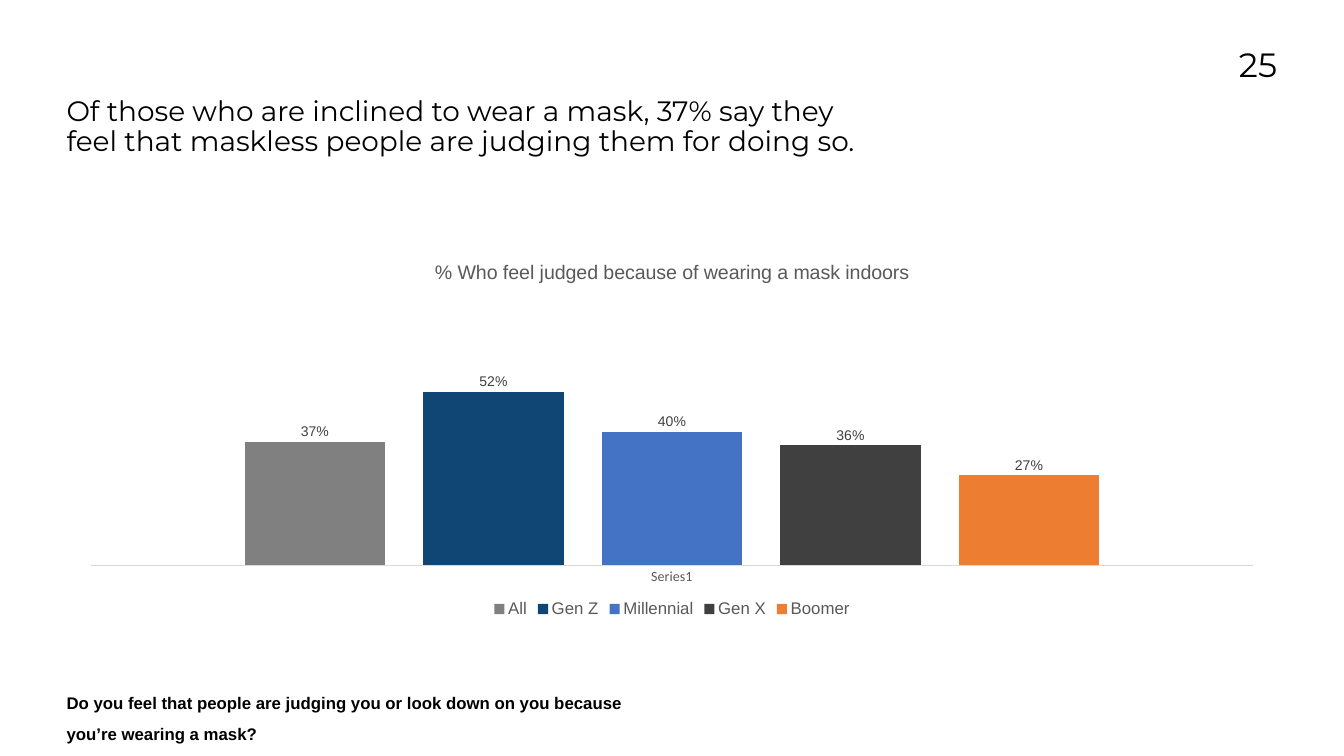
"""Build the slide on feeling judged for wearing a mask indoors."""
from dataclasses import dataclass

from lxml.etree import SubElement
from pptx import Presentation
from pptx.chart.data import CategoryChartData
from pptx.dml.color import RGBColor
from pptx.enum.chart import XL_CHART_TYPE, XL_LABEL_POSITION, XL_LEGEND_POSITION, XL_TICK_MARK
from pptx.enum.text import PP_ALIGN
from pptx.oxml.ns import qn
from pptx.util import Inches, Pt


@dataclass(frozen=True)
class Theme:
    """Colours as RRGGBB, type as (font, points, colour, bold)."""
    axis_line: str = "D9D9D9"
    page: tuple = ("Montserrat", 48, "000000", False)
    headline: tuple = ("Montserrat", 40, "000000", False)
    question: tuple = ("Arial", 24, "000000", True)
    chart_title: tuple = ("Arial", 28, "595959", False)
    legend: tuple = ("Arial", 24, "595959", False)
    axis: tuple = ("Calibri", 20, "595959", False)
    value: tuple = ("Arial", 20, "404040", False)


GENERATIONS = [
    ("All", 0.37, "808080"),
    ("Gen Z", 0.52, "104674"),
    ("Millennial", 0.40, "4472C4"),
    ("Gen X", 0.36, "404040"),
    ("Boomer", 0.27, "ED7D31"),
]


def apply(target, formats):
    """Set each attribute of target from a dict of format values."""
    for attribute, value in formats.items():
        setattr(target, attribute, value)


class SlideBuilder:
    """Holds the theme and the slide; places are in a 100 by 100 grid."""

    def __init__(self, deck, theme):
        self.theme = theme
        self.slide = deck.slides.add_slide(deck.slide_layouts[6])
        self.column = deck.slide_width / 100
        self.row = deck.slide_height / 100

    def place(self, left, top, width, height):
        """Turn grid units into lengths."""
        return [round(share * unit) for share, unit in
                zip((left, top, width, height), (self.column, self.row) * 2)]

    def style(self, font, look):
        """Give a font one of the theme's type styles."""
        name, size, color, bold = look
        apply(font, {"name": name, "size": Pt(size), "bold": bold})
        font.color.rgb = RGBColor.from_string(color)

    def text(self, place, words, look, **paragraph_format):
        """Add a text box without insets."""
        frame = self.slide.shapes.add_textbox(*self.place(*place)).text_frame
        apply(frame, {"word_wrap": True, "margin_left": 0, "margin_right": 0,
                      "margin_top": 0, "margin_bottom": 0})
        paragraph = frame.paragraphs[0]
        apply(paragraph, paragraph_format)
        run = paragraph.add_run()
        run.text = words
        self.style(run.font, look)

    def columns(self, place, title, category, groups, plot_area):
        """Add a clustered column chart with one series per group."""
        data = CategoryChartData(number_format="0%")
        data.categories = [category]
        for name, share, _ in groups:
            data.add_series(name, [share])
        chart = self.slide.shapes.add_chart(
            XL_CHART_TYPE.COLUMN_CLUSTERED, *self.place(*place), data).chart

        apply(chart, {"has_title": True, "has_legend": True})
        heading = chart.chart_title.text_frame.paragraphs[0].add_run()
        heading.text = title
        self.style(heading.font, self.theme.chart_title)
        apply(chart.legend, {"position": XL_LEGEND_POSITION.BOTTOM,
                             "include_in_layout": False})
        self.style(chart.legend.font, self.theme.legend)

        apply(chart.value_axis, {"visible": False, "has_major_gridlines": False,
                                 "minimum_scale": 0, "maximum_scale": 0.8})
        apply(chart.category_axis, {"major_tick_mark": XL_TICK_MARK.NONE,
                                    "minor_tick_mark": XL_TICK_MARK.NONE})
        self.style(chart.category_axis.tick_labels.font, self.theme.axis)
        baseline = chart.category_axis.format.line
        baseline.width = Pt(0.75)
        baseline.color.rgb = RGBColor.from_string(self.theme.axis_line)

        plot = chart.plots[0]
        apply(plot, {"gap_width": 219, "overlap": -27, "vary_by_categories": False})
        for series, (_, _, color) in zip(plot.series, groups):
            series.format.fill.solid()
            series.format.fill.fore_color.rgb = RGBColor.from_string(color)
            labels = series.data_labels
            apply(labels, {"show_value": True, "number_format": "0%",
                           "number_format_is_linked": False,
                           "position": XL_LABEL_POSITION.OUTSIDE_END})
            self.style(labels.font, self.theme.value)
        self.fix_plot_area(chart, plot_area)

    def fix_plot_area(self, chart, shares):
        """Pin the inner plot area to shares of the chart's size."""
        area = chart.element.find(".//" + qn("c:plotArea"))
        layout = area.find(qn("c:layout"))
        if layout is None:
            layout = SubElement(area, qn("c:layout"))
            area.insert(0, layout)
        manual = SubElement(layout, qn("c:manualLayout"))
        settings = {"layoutTarget": "inner", "xMode": "edge", "yMode": "edge",
                    **dict(zip("xywh", shares))}
        for tag, value in settings.items():
            SubElement(manual, qn(f"c:{tag}"), val=str(value))


def main():
    """Compose and save the slide."""
    deck = Presentation()
    apply(deck, {"slide_width": Inches(26.67), "slide_height": Inches(15)})
    theme = Theme()
    builder = SlideBuilder(deck, theme)
    margin = 4.95
    builder.text((86.58, 5.87, 8.44, 10.93), "25", theme.page,
                 alignment=PP_ALIGN.RIGHT)
    builder.columns((margin, 32.53, 100 - 2 * margin, 49.73),
                    "% Who feel judged because of wearing a mask indoors",
                    "Series1", GENERATIONS, (0.02, 0.14, 0.96, 0.71))
    builder.text((margin, 12.87, 60.03, 13.87),
                 "Of those who are inclined to wear a mask, 37% say they feel "
                 "that maskless people are judging them for doing so.",
                 theme.headline, line_spacing=0.9)
    builder.text((margin, 90.33, 45.03, 4.33),
                 "Do you feel that people are judging you or look down on you "
                 "because you’re wearing a mask?",
                 theme.question, line_spacing=1.5)
    deck.save("out.pptx")


if __name__ == "__main__":
    main()
